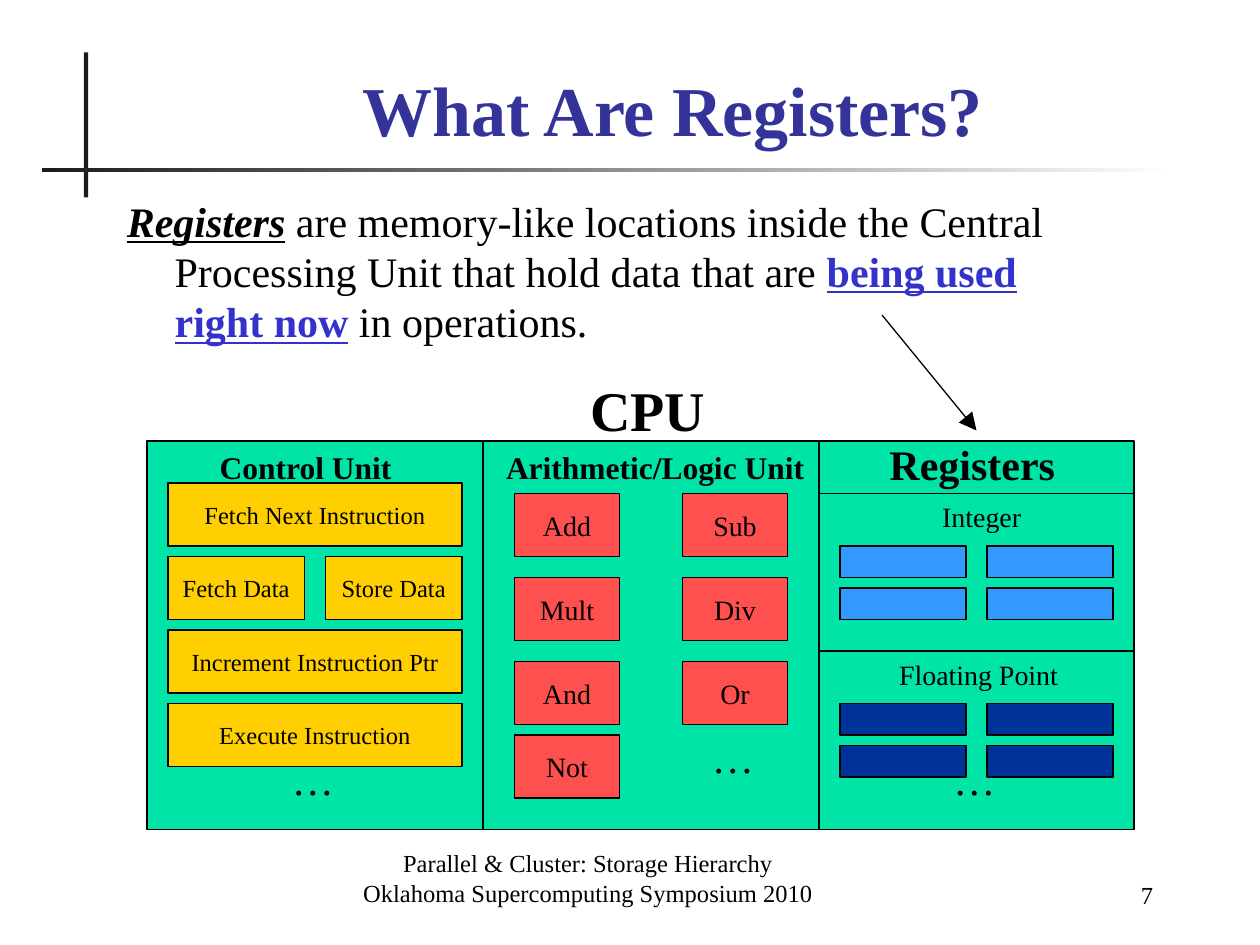
from itertools import product
from lxml.etree import SubElement
from pptx import Presentation
from pptx.dml.color import RGBColor
from pptx.enum.shapes import MSO_CONNECTOR as Link, MSO_SHAPE as Form
from pptx.enum.text import MSO_ANCHOR as Anchor, MSO_AUTO_SIZE as Fit, PP_ALIGN as Align
from pptx.oxml.ns import qn
from pptx.util import Inches, Pt

FONT = "Times New Roman"
INK = "000000"
GOLD = "FFCF01"
RED = "FF5050"
BLUE = "3399FF"
NAVY = "003399"


def grid(*cells):
    """Turn grid cells, twelve to the inch, into lengths."""
    return [Inches(cell / 12) for cell in cells]


def tint(spot, code):
    """Set a colour from a hex string."""
    spot.rgb = RGBColor.from_string(code)


def add_run(para, text, size, color=INK, bold=False, italic=False, under=False):
    """Append one styled run to a paragraph."""
    run = para.add_run()
    run.text = text
    font = run.font
    font.name, font.size = FONT, Pt(size)
    font.bold, font.italic, font.underline = bold, italic, under
    tint(font.color, color)


def add_text(slide, area, lines, size, align=Align.CENTER, anchor=Anchor.BOTTOM, **style):
    """Add a wrapping text box with one paragraph per line."""
    frame = slide.shapes.add_textbox(*grid(*area)).text_frame
    frame.word_wrap = True
    frame.vertical_anchor = anchor
    for num, line in enumerate(lines):
        para = frame.add_paragraph() if num else frame.paragraphs[0]
        para.alignment = align
        add_run(para, line, size, **style)
    return frame


def add_label(slide, mid, top, text, size, wide, bold=False):
    """Add a one-line label centred on a column."""
    high = size * 0.2 + 1.2
    area = (mid - wide / 2, top, wide, high)
    frame = add_text(slide, area, [text], size, anchor=Anchor.TOP, bold=bold)
    frame.word_wrap = False
    frame.auto_size = Fit.SHAPE_TO_FIT_TEXT


def add_box(slide, area, color, text="", size=14):
    """Add an outlined rectangle with an optional caption."""
    box = slide.shapes.add_shape(Form.RECTANGLE, *grid(*area))
    box.shadow.inherit = False
    box.fill.solid()
    tint(box.fill.fore_color, color)
    tint(box.line.color, INK)
    box.line.width = Pt(0.75)
    if text:
        frame = box.text_frame
        frame.word_wrap = False
        frame.vertical_anchor = Anchor.MIDDLE
        frame.paragraphs[0].alignment = Align.CENTER
        add_run(frame.paragraphs[0], text, size)


def add_line(slide, start, end, arrow=False):
    """Add a thin line, with an arrowhead at its end if asked."""
    line = slide.shapes.add_connector(Link.STRAIGHT, *grid(*start, *end))
    tint(line.line.color, INK)
    line.line.width = Pt(0.75)
    props = line.line._get_or_add_ln()
    if arrow:
        SubElement(props, qn("a:tailEnd"), type="triangle", w="lg", len="lg")
    SubElement(props.getparent(), qn("a:effectLst"))


def add_bar(slide, area, first, last):
    """Add a borderless bar that fades between two colours."""
    bar = slide.shapes.add_shape(Form.RECTANGLE, *grid(*area))
    bar.shadow.inherit = False
    bar.line.fill.background()
    if first == last:
        bar.fill.solid()
        tint(bar.fill.fore_color, first)
        return
    bar.fill.gradient()
    bar.fill.gradient_angle = 0
    for stop, code in zip(bar.fill.gradient_stops, (first, last)):
        tint(stop.color, code)


def add_intro(slide):
    """Add the definition with its hanging indent."""
    frame = slide.shapes.add_textbox(*grid(10.9, 18, 96.3, 24)).text_frame
    frame.word_wrap = True
    para = frame.paragraphs[0]
    props = para._p.get_or_add_pPr()
    props.set("marL", str(Inches(0.38)))
    props.set("indent", str(Inches(-0.38)))
    add_run(para, "Registers", 24, bold=True, italic=True, under=True)
    add_run(para, " are memory-like locations inside the Central "
            "Processing Unit that hold data that are ", 24)
    add_run(para, "being used right now", 24, "3333CC", bold=True, under=True)
    add_run(para, " in operations.", 24)


def add_control(slide):
    """Fill the control unit column."""
    add_label(slide, 29.1, 42.1, "Control Unit", 18, 20, True)
    steps = [(16, 46, 28, "Fetch Next Instruction"), (16, 53, 13, "Fetch Data"),
             (31, 53, 13, "Store Data"), (16, 60, 28, "Increment Instruction Ptr"),
             (16, 67, 28, "Execute Instruction")]
    for left, top, wide, text in steps:
        add_box(slide, (left, top, wide, 6), GOLD, text)
    add_label(slide, 29.8, 71.2, "…", 24, 7)


def add_logic(slide):
    """Fill the arithmetic and logic column."""
    add_label(slide, 62.4, 42.1, "Arithmetic/Logic Unit", 18, 32, True)
    names = ["Add", "Sub", "Mult", "Div", "And", "Or", "Not"]
    for (top, left), name in zip(product((47, 55, 63, 70), (49, 65)), names):
        add_box(slide, (left, top, 10, 6), RED, name, 16)
    add_label(slide, 69.8, 69.1, "…", 24, 7)


def add_store(slide):
    """Fill the registers column."""
    add_label(slide, 92.6, 41.2, "Registers", 24, 19, True)
    banks = [(47, 52, 93.5, "Integer", 11, BLUE),
             (62, 67, 93.2, "Floating Point", 18.5, NAVY)]
    for edge, top, mid, name, wide, color in banks:
        add_line(slide, (78, edge), (108, edge))
        add_label(slide, mid, edge, name, 16, wide)
        for row, left in product((0, 4), (80, 94)):
            add_box(slide, (left, top + row, 12, 3), color)
    add_label(slide, 92.8, 71.2, "…", 24, 7)


def main():
    """Build and save the slide."""
    deck = Presentation()
    deck.slide_width, deck.slide_height = grid(120, 90)
    slide = deck.slides.add_slide(deck.slide_layouts[6])
    add_bar(slide, (8, 5, 0.4, 13.8), "1C1C1C", "1C1C1C")
    add_bar(slide, (4, 16, 108, 0.4), "1C1C1C", "FFFFFF")
    add_text(slide, (13, 6, 102.2, 8.9), ["What Are Registers?"], 40,
             color="333399", bold=True)
    add_intro(slide)
    add_box(slide, (14, 42, 94, 37), "00E4A8")
    for col in (46, 78):
        add_line(slide, (col, 42), (col, 79))
    add_control(slide)
    add_logic(slide)
    add_store(slide)
    add_label(slide, 61.7, 35.2, "CPU", 32, 15, True)
    add_line(slide, (84, 30), (93, 41), arrow=True)
    add_text(slide, (21, 81, 70, 6), ["Parallel & Cluster: Storage Hierarchy",
             "Oklahoma Supercomputing Symposium 2010"], 14)
    add_text(slide, (94, 81.2, 17, 6), ["7"], 14, Align.RIGHT)
    deck.save("out.pptx")


if __name__ == "__main__":
    main()
